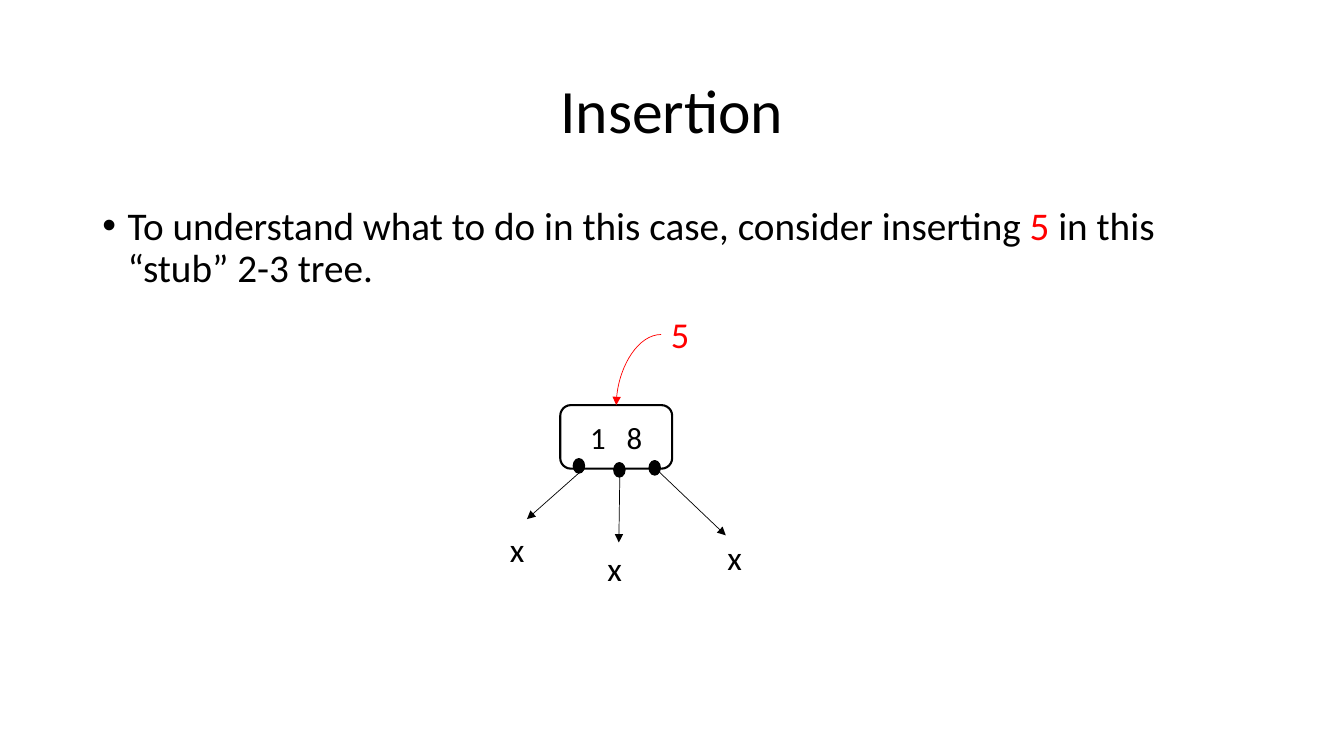
"""Build the slide on inserting a key into a stub 2-3 tree."""
from dataclasses import dataclass

import lxml.etree
import pptx
import pptx.dml.color
import pptx.enum.shapes
import pptx.enum.text
import pptx.oxml.ns
import pptx.util

Cm = pptx.util.Cm
BLACK = "000000"
RED = "FF0000"
CENTER = pptx.enum.text.PP_ALIGN.CENTER
MIDDLE = pptx.enum.text.MSO_ANCHOR.MIDDLE
GROW = pptx.enum.text.MSO_AUTO_SIZE.SHAPE_TO_FIT_TEXT
SHAPES = pptx.enum.shapes.MSO_SHAPE
LINES = pptx.enum.shapes.MSO_CONNECTOR


@dataclass
class Span:
    text: str
    color: str = BLACK
    spacing: int = 0


@dataclass
class Label:
    box: tuple[float, float, float, float]
    spans: list[Span]
    size: float
    frame: dict
    para: dict


@dataclass
class Branch:
    dot: tuple[float, float]
    start: tuple[float, float]
    end: tuple[float, float]
    leaf: tuple[float, float]
    joined: bool = False


def rgb(value: str) -> pptx.dml.color.RGBColor:
    """Turn a hex string into a colour."""
    return pptx.dml.color.RGBColor.from_string(value)


def set_all(target, values: dict) -> None:
    """Set every attribute named in values."""
    for name, value in values.items():
        setattr(target, name, value)


def add_child(parent, tag: str, **attrs: str):
    """Append a DrawingML element."""
    return lxml.etree.SubElement(parent, pptx.oxml.ns.qn(tag), attrs)


def write(sp, label: Label) -> None:
    """Put the label's text and formats into a shape."""
    tf = sp.text_frame
    set_all(tf, {"word_wrap": True, **label.frame})
    p = tf.paragraphs[0]
    set_all(p, label.para)
    for span in label.spans:
        r = p.add_run()
        r.text = span.text
        set_all(r.font, {"name": "Calibri", "size": pptx.util.Pt(label.size)})
        r.font.color.rgb = rgb(span.color)
        if span.spacing:
            r.font._element.set("spc", str(span.spacing))


def add_label(s, label: Label):
    """Add a text box."""
    sp = s.shapes.add_textbox(*map(Cm, label.box))
    write(sp, label)
    return sp


def add_outlined(s, kind, box: tuple, width: float, fill: str | None = None):
    """Add a preset shape with a black outline."""
    sp = s.shapes.add_shape(kind, *map(Cm, box))
    sp.shadow.inherit = False
    if fill:
        sp.fill.solid()
        sp.fill.fore_color.rgb = rgb(fill)
    else:
        sp.fill.background()
    sp.line.color.rgb = rgb(BLACK)
    sp.line.width = pptx.util.Pt(width)
    return sp


def add_arrow(s, kind, start: tuple, end: tuple, color: str):
    """Add a thin connector with an arrowhead at its end."""
    cxn = s.shapes.add_connector(kind, *map(Cm, start + end))
    cxn.line.color.rgb = rgb(color)
    cxn.line.width = pptx.util.Pt(0.5)
    add_child(cxn.line._get_or_add_ln(), "a:tailEnd", type="triangle")
    add_child(cxn._element.spPr, "a:effectLst")
    return cxn


def bend_once(cxn) -> None:
    """Make a connector leave sideways and arrive downwards."""
    pr = cxn._element.spPr
    pr.find(pptx.oxml.ns.qn("a:prstGeom")).set("prst", "curvedConnector2")
    xfrm = pr.find(pptx.oxml.ns.qn("a:xfrm"))
    xfrm.attrib.pop("flipH", None)
    xfrm.set("rot", "10800000")
    xfrm.set("flipV", "1")


def add_bullet(sp) -> None:
    """Give the first paragraph a hanging bullet."""
    pr = sp.text_frame.paragraphs[0]._p.get_or_add_pPr()
    pr.set("marL", "228600")
    pr.set("indent", "-228600")
    add_child(pr, "a:buFont", typeface="Arial")
    add_child(pr, "a:buChar", char="•")


TITLE = Label((2.33, 1.02, 29.21, 3.68), [Span("Insertion")], 44,
              {"vertical_anchor": MIDDLE}, {"alignment": CENTER, "line_spacing": 0.9})
BODY = Label((2.33, 5.08, 29.21, 12.09),
             [Span("To understand what to do in this case, consider inserting "),
              Span("5", RED), Span(" in this “stub” 2-3 tree.")],
             28, {}, {"line_spacing": 0.9})
NODE = Label((14.12, 10.21, 2.82, 1.6), [Span("1"), Span(" ", spacing=1000), Span("8")],
             22, {"vertical_anchor": MIDDLE}, {"alignment": CENTER})
NEW_KEY = Label((16.66, 7.75, 1.42, 1.37), [Span("5", RED)], 26, {"auto_size": GROW}, {})
BRANCHES = [
    Branch((14.45, 11.56), (14.6, 11.91), (13.28, 13.08), (12.6, 13.21)),
    Branch((15.47, 11.66), (15.62, 11.99), (15.6, 13.67), (15.06, 13.67), True),
    Branch((16.36, 11.61), (16.61, 11.89), (18.29, 13.49), (18.08, 13.41)),
]


def main() -> None:
    """Draw the slide and save it."""
    prs = pptx.Presentation()
    set_all(prs, {"slide_width": Cm(33.87), "slide_height": Cm(19.05)})
    s = prs.slides.add_slide(prs.slide_layouts[6])
    add_label(s, TITLE)
    add_bullet(add_label(s, BODY))
    write(add_outlined(s, SHAPES.ROUNDED_RECTANGLE, NODE.box, 1.5), NODE)
    add_label(s, NEW_KEY)
    bend_once(add_arrow(s, LINES.CURVE, (16.66, 8.43), (15.53, 10.21), RED))
    for branch in BRANCHES:
        add_outlined(s, SHAPES.OVAL, branch.dot + (0.28, 0.36), 1, BLACK)
        cxn = add_arrow(s, LINES.STRAIGHT, branch.start, branch.end, BLACK)
        leaf = add_label(s, Label(branch.leaf + (1.07, 1.27), [Span("x")], 24,
                                  {"auto_size": GROW}, {}))
        if branch.joined:
            cxn.end_connect(leaf, 0)
    prs.save("out.pptx")


if __name__ == "__main__":
    main()
